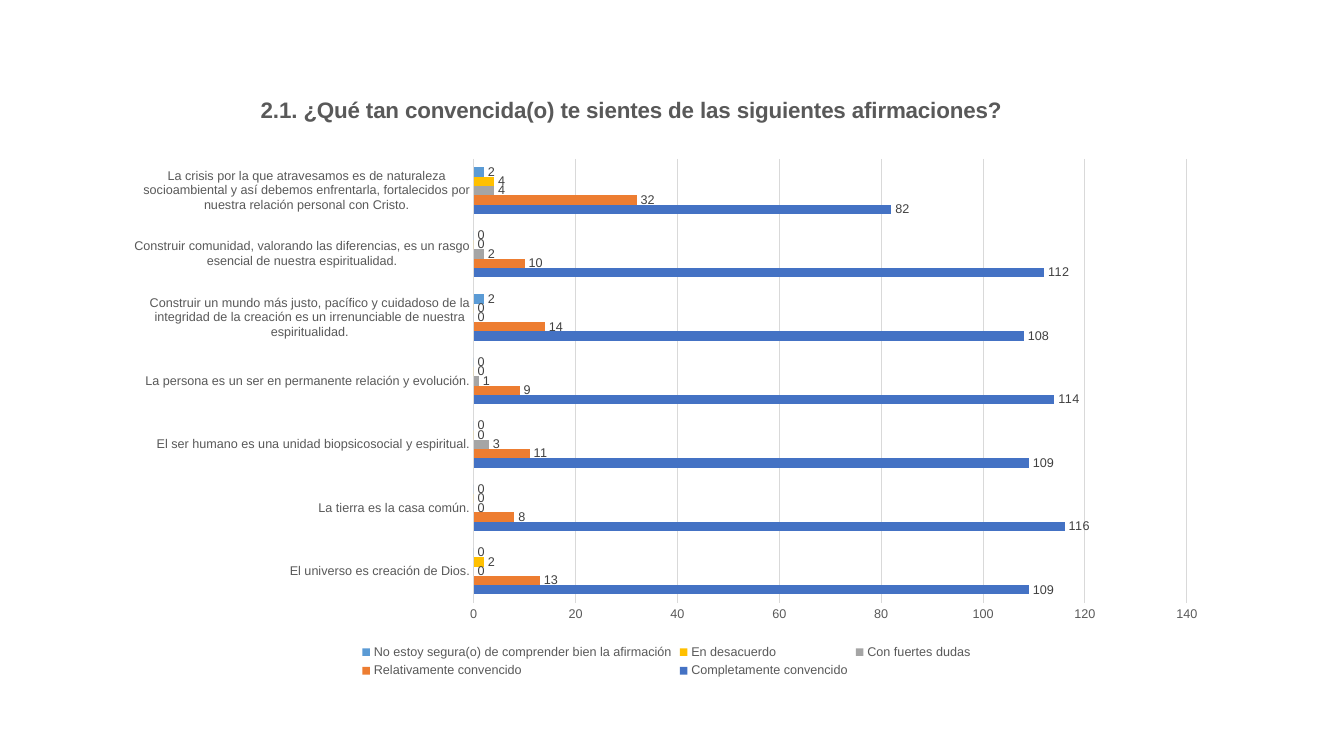
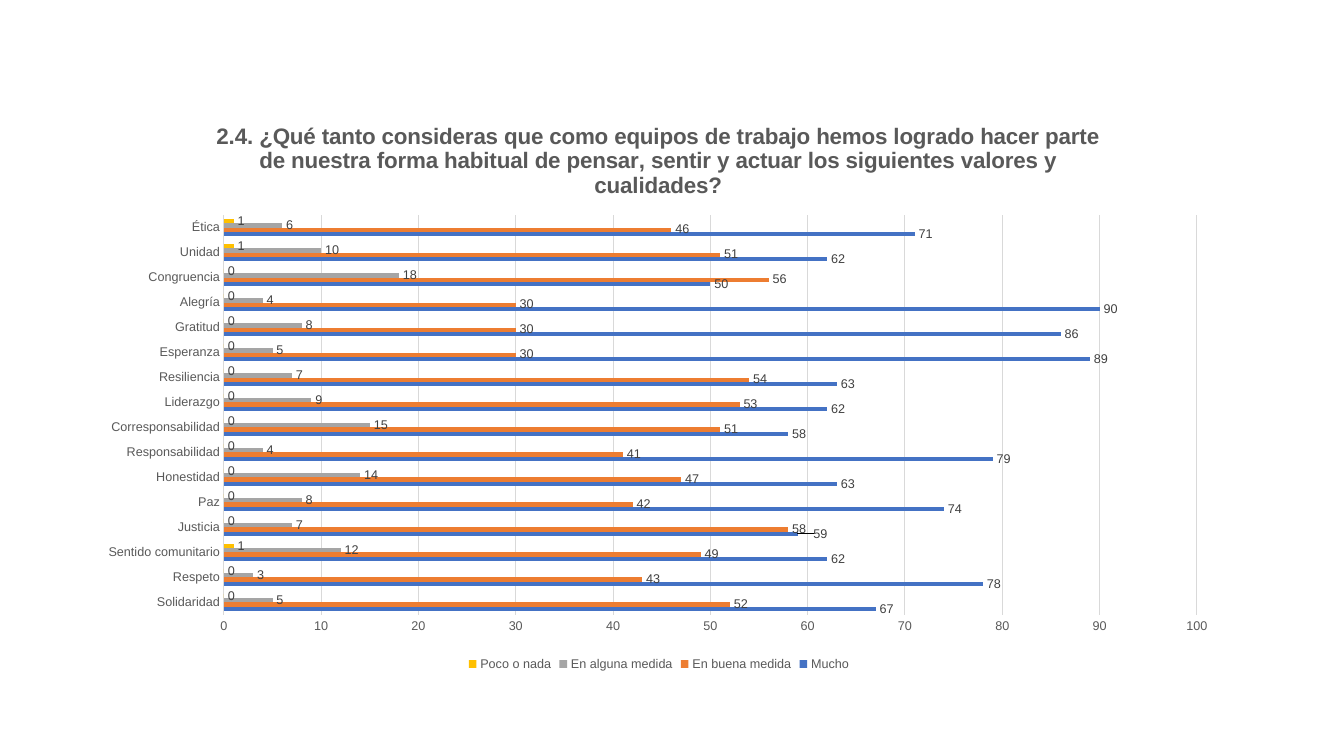
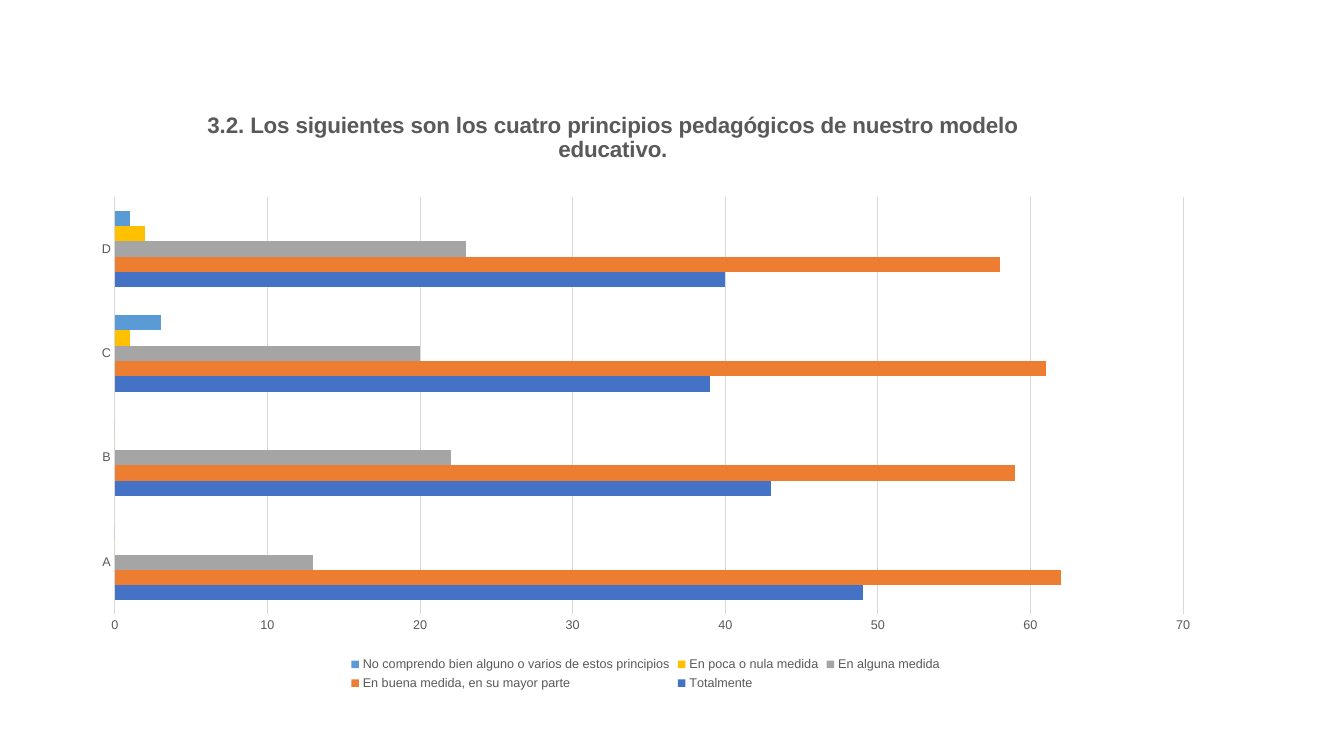
from lxml import etree
from pptx import Presentation
from pptx.chart.data import CategoryChartData
from pptx.dml.color import RGBColor
from pptx.enum.chart import XL_CHART_TYPE, XL_LABEL_POSITION, XL_LEGEND_POSITION, XL_TICK_MARK
from pptx.oxml.ns import qn
from pptx.util import Cm, Pt

CLUSTERED_BARS = XL_CHART_TYPE.BAR_CLUSTERED
OUTSIDE_END = XL_LABEL_POSITION.OUTSIDE_END
BOTTOM = XL_LEGEND_POSITION.BOTTOM
NO_TICK = XL_TICK_MARK.NONE

FONT = "Arial"
COLORS = {
    "text": "595959",
    "value": "404040",
    "grid": "D9D9D9",
    "blue": "4472C4",
    "orange": "ED7D31",
    "gray": "A5A5A5",
    "yellow": "FFC000",
    "light_blue": "5B9BD5",
}
ANSWER_COLORS = ["blue", "orange", "gray", "yellow", "light_blue"]

SURVEY = [
    {
        "title": "2.1. ¿Qué tan convencida(o) te sientes de las siguientes afirmaciones?",
        "frame": (2.84, 2.31, 27.91, 14.88),
        "title_at": (0.13, 0),
        "plot_at": (0.326, 0.114, 0.644, 0.752),
        "scale": (140, 20),
        "labels": True,
        "shifted_labels": [],
        "categories": [
            "El universo es creación de Dios.",
            "La tierra es la casa común.",
            "El ser humano es una unidad biopsicosocial y espiritual.",
            "La persona es un ser en permanente relación y evolución.",
            "Construir un mundo más justo, pacífico y cuidadoso de la integridad "
            "de la creación es un irrenunciable de nuestra espiritualidad.",
            "Construir comunidad, valorando las diferencias, es un rasgo esencial "
            "de nuestra espiritualidad.",
            "La crisis por la que atravesamos es de naturaleza socioambiental y así "
            "debemos enfrentarla, fortalecidos por nuestra relación personal con Cristo.",
        ],
        "answers": {
            "Completamente convencido": [109, 116, 109, 114, 108, 112, 82],
            "Relativamente convencido": [13, 8, 11, 9, 14, 10, 32],
            "Con fuertes dudas": [0, 0, 3, 1, 0, 2, 4],
            "En desacuerdo": [2, 0, 0, 0, 0, 0, 4],
            "No estoy segura(o) de comprender bien la afirmación": [0, 0, 0, 0, 2, 0, 2],
        },
    },
    {
        "title": "2.4. ¿Qué tanto consideras que como equipos de trabajo hemos logrado "
                 "hacer parte de nuestra forma habitual de pensar, sentir y actuar los "
                 "siguientes valores y cualidades?",
        "frame": (2.18, 2.54, 28.85, 14.48),
        "title_at": (0.11, 0.03),
        "plot_at": (0.12, 0.199, 0.85, 0.696),
        "scale": (100, 10),
        "labels": True,
        "shifted_labels": [("Mucho", "Justicia", (0.01, 0))],
        "categories": [
            "Solidaridad", "Respeto", "Sentido comunitario", "Justicia", "Paz",
            "Honestidad", "Responsabilidad", "Corresponsabilidad", "Liderazgo",
            "Resiliencia", "Esperanza", "Gratitud", "Alegría", "Congruencia",
            "Unidad", "Ética",
        ],
        "answers": {
            "Mucho": [67, 78, 62, 59, 74, 63, 79, 58, 62, 63, 89, 86, 90, 50, 62, 71],
            "En buena medida": [52, 43, 49, 58, 42, 47, 41, 51, 53, 54, 30, 30, 30, 56, 51, 46],
            "En alguna medida": [5, 3, 12, 7, 8, 14, 4, 15, 9, 7, 5, 8, 4, 18, 10, 6],
            "Poco o nada": [0, 0, 1, 0, 0, 0, 0, 0, 0, 0, 0, 0, 0, 0, 1, 1],
        },
    },
    {
        "title": "3.2. Los siguientes son los cuatro principios pedagógicos de nuestro "
                 "modelo educativo.",
        "frame": (1.98, 2.69, 28.58, 14.81),
        "title_at": (0.11, 0),
        "plot_at": (0.032, 0.153, 0.942, 0.711),
        "scale": (70, 10),
        "labels": False,
        "shifted_labels": [],
        "categories": ["A", "B", "C", "D"],
        "answers": {
            "Totalmente": [49, 43, 39, 40],
            "En buena medida, en su mayor parte": [62, 59, 61, 58],
            "En alguna medida": [13, 22, 20, 23],
            "En poca o nula medida": [0, 0, 1, 2],
            "No comprendo bien alguno o varios de estos principios": [0, 0, 3, 1],
        },
    },
]


def rgb(color):
    return RGBColor.from_string(COLORS[color])


def style_font(font, size, color, bold=False):
    font.name = FONT
    font.size = Pt(size)
    font.bold = bold
    font.color.rgb = rgb(color)


def style_line(line, color):
    line.color.rgb = rgb(color)
    line.width = Pt(0.75)


def set_layout(parent, index, fractions, inner=False, mode="edge"):
    for previous in parent.findall(qn("c:layout")):
        parent.remove(previous)
    layout = etree.Element(qn("c:layout"))
    manual = etree.SubElement(layout, qn("c:manualLayout"))
    settings = [("layoutTarget", "inner")] if inner else []
    settings += [("xMode", mode), ("yMode", mode)]
    settings += zip("xywh", fractions)
    for tag, value in settings:
        etree.SubElement(manual, qn(f"c:{tag}")).set("val", str(value))
    parent.insert(index, layout)


def add_title(chart, question):
    heading = chart.chart_title
    paragraph = heading.text_frame.paragraphs[0]
    paragraph.text = question["title"]
    style_font(paragraph.font, 16, "text", bold=True)
    set_layout(heading._element, 1, question["title_at"])


def style_axes(chart, scale):
    for axis in (chart.category_axis, chart.value_axis):
        axis.major_tick_mark = axis.minor_tick_mark = NO_TICK
        style_font(axis.tick_labels.font, 9, "text")
    style_line(chart.category_axis.format.line, "grid")
    counts = chart.value_axis
    counts.minimum_scale = 0
    counts.maximum_scale, counts.major_unit = scale
    counts.format.line.fill.background()
    style_line(counts.major_gridlines.format.line, "grid")


def style_bars(plot):
    plot.gap_width = 182
    plot.overlap = 0
    plot.vary_by_categories = False
    for answer, color in zip(plot.series, ANSWER_COLORS):
        answer.format.fill.solid()
        answer.format.fill.fore_color.rgb = rgb(color)
        answer.invert_if_negative = False


def add_value_labels(plot, question):
    for answer in plot.series:
        labels = answer.data_labels
        labels.show_value = True
        labels.position = OUTSIDE_END
        style_font(labels.font, 9, "value")
        for name, category, offset in question["shifted_labels"]:
            if name == answer.name:
                point = answer.points[question["categories"].index(category)]
                label = point.data_label
                style_font(label.font, 9, "value")
                label.position = OUTSIDE_END
                set_layout(label._dLbl, 1, offset, mode="factor")


def add_legend(chart):
    chart.has_legend = True
    chart.legend.position = BOTTOM
    chart.legend.include_in_layout = False
    style_font(chart.legend.font, 9, "text")


def add_question(slide, question):
    data = CategoryChartData(number_format="General")
    data.categories = question["categories"]
    for answer, counts in question["answers"].items():
        data.add_series(answer, counts)
    frame = [Cm(length) for length in question["frame"]]
    chart = slide.shapes.add_chart(CLUSTERED_BARS, *frame, data).chart
    chart.font.name = FONT
    chart.font.size = Pt(10)
    add_title(chart, question)
    style_axes(chart, question["scale"])
    bars = chart.plots[0]
    style_bars(bars)
    if question["labels"]:
        add_value_labels(bars, question)
    add_legend(chart)
    plot_area = chart._chartSpace.chart.plotArea
    set_layout(plot_area, 0, question["plot_at"], inner=True)


def main():
    deck = Presentation()
    deck.slide_width, deck.slide_height = Cm(33.87), Cm(19.05)
    blank = deck.slide_layouts[6]
    for question in SURVEY:
        add_question(deck.slides.add_slide(blank), question)
    deck.save("out.pptx")


if __name__ == "__main__":
    main()
